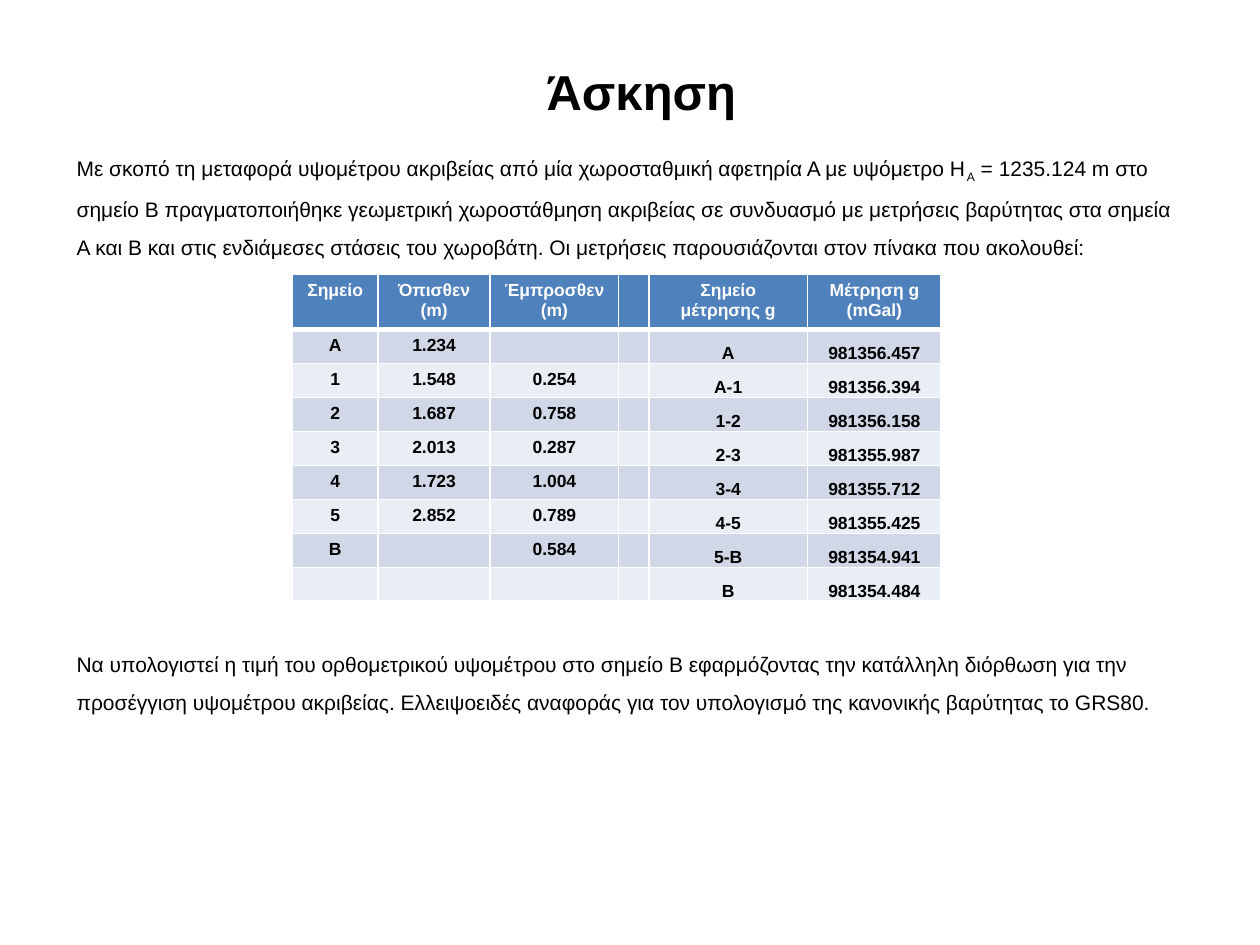
"""Builds a slide with a levelling exercise and its table of measurements."""
from dataclasses import dataclass

from lxml.etree import SubElement
from pptx import Presentation
from pptx.dml.color import RGBColor
from pptx.enum.text import MSO_ANCHOR as Anchor, MSO_AUTO_SIZE as AutoSize, PP_ALIGN as Align
from pptx.oxml.ns import qn
from pptx.util import Inches, Pt

BLACK, WHITE, HEADER_BLUE = "000000", "FFFFFF", "4F81BD"
BANDS = ("D0D8E8", "E9EDF4")
GRAVITY_COLUMN = 4
COLUMN_WIDTHS = (0.68, 0.89, 1.02, 0.24, 1.26, 1.06)
HEADER_HEIGHT, ROW_HEIGHT = 0.41, 0.27

INTRO = "Με σκοπό τη μεταφορά υψομέτρου ακριβείας από μία χωροσταθμική αφετηρία Α με υψόμετρο Η"
MEASUREMENTS = (
    " = 1235.124 m στο σημείο Β πραγματοποιήθηκε γεωμετρική χωροστάθμηση ακριβείας "
    "σε συνδυασμό με μετρήσεις βαρύτητας στα σημεία Α και Β και στις ενδιάμεσες στάσεις "
    "του χωροβάτη. Οι μετρήσεις παρουσιάζονται στον πίνακα που ακολουθεί:"
)
QUESTION = (
    "Να υπολογιστεί η τιμή του ορθομετρικού υψομέτρου στο σημείο Β εφαρμόζοντας την "
    "κατάλληλη διόρθωση για την προσέγγιση υψομέτρου ακριβείας. Ελλειψοειδές αναφοράς "
    "για τον υπολογισμό της κανονικής βαρύτητας το GRS80."
)
HEADINGS = ("Σημείο", "Όπισθεν (m)", "Έμπροσθεν (m)", "", "Σημείο μέτρησης g", "Μέτρηση g (mGal)")


@dataclass(frozen=True)
class Reading:
    """One table row: a levelling reading beside a gravity reading."""
    point: str
    back: str
    fore: str
    gravity_point: str
    gravity: str

    def texts(self) -> tuple[str, ...]:
        """Return the row's texts with the empty column between both parts."""
        return self.point, self.back, self.fore, "", self.gravity_point, self.gravity


READINGS = (
    Reading("A", "1.234", "", "A", "981356.457"),
    Reading("1", "1.548", "0.254", "A-1", "981356.394"),
    Reading("2", "1.687", "0.758", "1-2", "981356.158"),
    Reading("3", "2.013", "0.287", "2-3", "981355.987"),
    Reading("4", "1.723", "1.004", "3-4", "981355.712"),
    Reading("5", "2.852", "0.789", "4-5", "981355.425"),
    Reading("B", "", "0.584", "5-B", "981354.941"),
    Reading("", "", "", "B", "981354.484"),
)


def color(value: str) -> RGBColor:
    """Turn a hex string into a colour."""
    return RGBColor.from_string(value)


def set_font(para, size: float, ink: str = BLACK, bold: bool = False) -> None:
    """Set the font of a whole paragraph."""
    font = para.font
    font.name, font.size, font.bold = "Arial", Pt(size), bold
    font.color.rgb = color(ink)


def add_box(page, left: float, top: float, width: float, height: float, wrap: bool):
    """Add a text box and return its text frame."""
    box = page.shapes.add_textbox(Inches(left), Inches(top), Inches(width), Inches(height))
    frame = box.text_frame
    frame.word_wrap, frame.auto_size = wrap, AutoSize.SHAPE_TO_FIT_TEXT
    return frame


def add_title(page) -> None:
    """Add the centred title."""
    para = add_box(page, 4.23, 0.44, 1.72, 0.57, wrap=False).paragraphs[0]
    para.text, para.alignment = "Άσκηση", Align.CENTER
    set_font(para, 28, bold=True)


def add_exercise(page) -> None:
    """Add the exercise text, leaving room for the table between its paragraphs."""
    frame = add_box(page, 0.51, 1.07, 8.98, 4.64, wrap=True)
    intro, question = frame.paragraphs[0], frame.add_paragraph()
    for text in (INTRO, "Α", MEASUREMENTS):
        intro.add_run().text = text
    subscript = intro.runs[1]
    subscript.font._element.set("baseline", "-25000")
    question.text, question.space_before = QUESTION, Pt(217)
    for para in (intro, question):
        para.line_spacing = 1.5
        set_font(para, 12)


def set_borders(cell, bottom: float) -> None:
    """Draw white cell borders, with the given bottom width in points."""
    properties = cell._tc.get_or_add_tcPr()
    for index, (side, width) in enumerate((("L", 1), ("R", 1), ("T", 1), ("B", bottom))):
        line = properties.makeelement(qn(f"a:ln{side}"), {"w": str(Pt(width))})
        fill = SubElement(line, qn("a:solidFill"))
        SubElement(fill, qn("a:srgbClr"), val=WHITE)
        properties.insert(index, line)


def fill_row(table, index: int, texts: tuple[str, ...], fill: str) -> None:
    """Write and style one table row."""
    header = index == 0
    for column, text in enumerate(texts):
        cell = table.cell(index, column)
        cell.text = text
        cell.fill.solid()
        cell.fill.fore_color.rgb = color(fill)
        para = cell.text_frame.paragraphs[0]
        para.alignment = Align.CENTER
        set_font(para, 10, WHITE if header else BLACK, bold=True)
        if not header and column >= GRAVITY_COLUMN:
            cell.vertical_anchor = Anchor.BOTTOM
            cell.margin_left = cell.margin_right = cell.margin_top = Inches(0.01)
            cell.margin_bottom = 0
        set_borders(cell, bottom=3 if header else 1)


def add_readings(page) -> None:
    """Add the table of levelling and gravity readings."""
    height = HEADER_HEIGHT + ROW_HEIGHT * len(READINGS)
    table = page.shapes.add_table(
        len(READINGS) + 1, len(COLUMN_WIDTHS),
        Inches(2.32), Inches(2.18), Inches(sum(COLUMN_WIDTHS)), Inches(height),
    ).table
    table.horz_banding = False
    for column, width in zip(table.columns, COLUMN_WIDTHS):
        column.width = Inches(width)
    for index, row in enumerate(table.rows):
        row.height = Inches(ROW_HEIGHT if index else HEADER_HEIGHT)
    fill_row(table, 0, HEADINGS, HEADER_BLUE)
    for index, reading in enumerate(READINGS):
        fill_row(table, index + 1, reading.texts(), BANDS[index % 2])


def main() -> None:
    """Build and save the deck."""
    deck = Presentation()
    deck.slide_width, deck.slide_height = Inches(10), Inches(7.5)
    page = deck.slides.add_slide(deck.slide_layouts[6])
    add_title(page)
    add_exercise(page)
    add_readings(page)
    deck.save("out.pptx")


if __name__ == "__main__":
    main()
